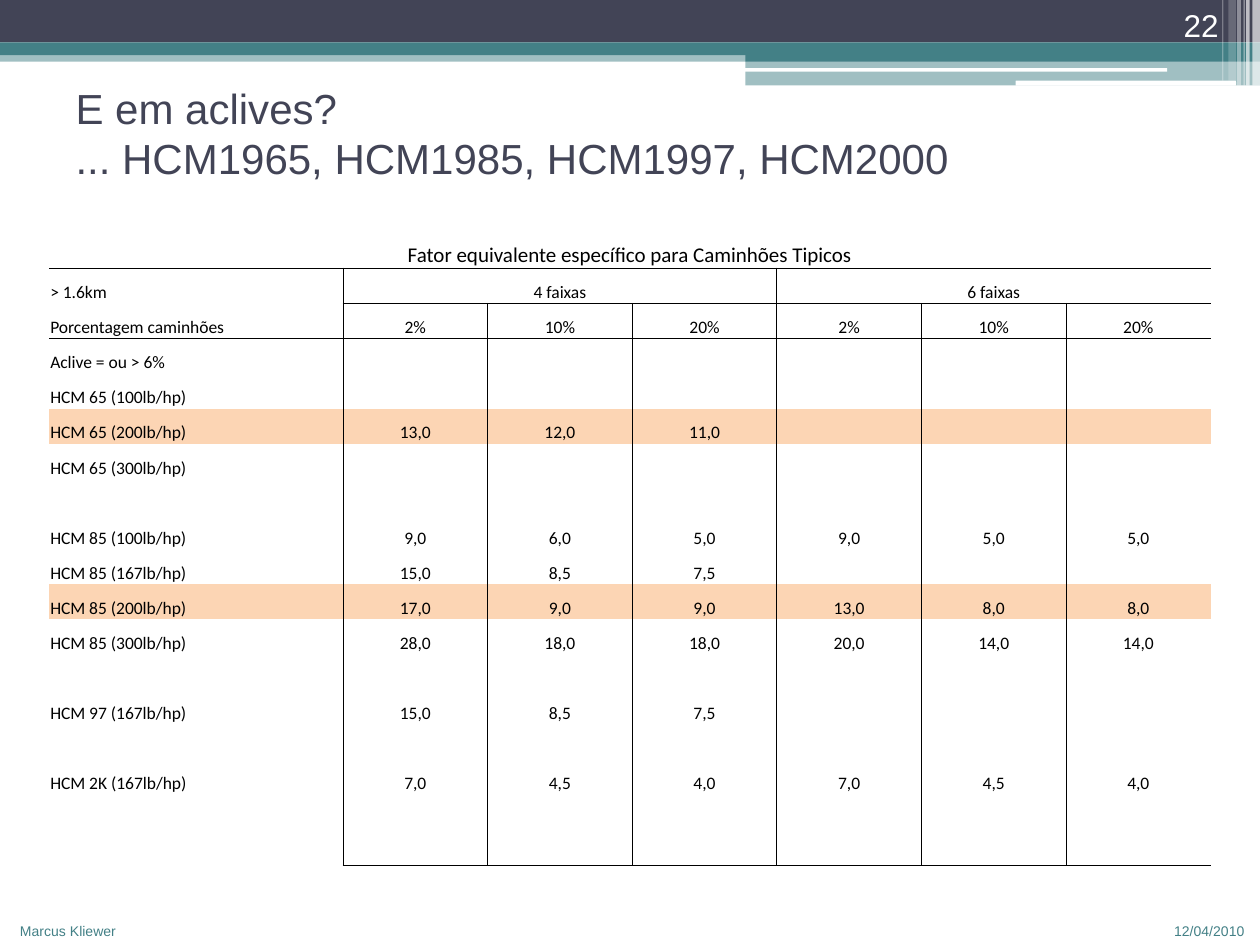
"""Build the slide on truck equivalency factors on upgrades."""
from lxml import etree
from pptx import Presentation
from pptx.dml.color import RGBColor
from pptx.enum.shapes import MSO_SHAPE
from pptx.enum.text import MSO_ANCHOR, PP_ALIGN
from pptx.oxml.ns import qn
from pptx.util import Pt

NAVY, TEAL, WHITE, BLACK, PEACH = "424456", "438086", "FFFFFF", "000000", "FCD5B4"


def color(hex_value):
    """Turn a hex string into a colour."""
    return RGBColor.from_string(hex_value)


def write(paragraph, text, size, hex_value, font="Arial", align=PP_ALIGN.LEFT):
    """Put one formatted run in a paragraph."""
    paragraph.alignment = align
    paragraph.text = text
    for run in paragraph.runs:
        for name, value in {"size": Pt(size), "name": font}.items():
            setattr(run.font, name, value)
        run.font.color.rgb = color(hex_value)


presentation = Presentation()
presentation.slide_width, presentation.slide_height = Pt(720), Pt(540)
slide = presentation.slides.add_slide(presentation.slide_layouts[5])

bars = [
    (0, 28.8, 720, 6.5, TEAL, 50),
    (0, 0, 720, 24.3, NAVY, 100),
    (0, 24.3, 720, 7.2, TEAL, 100),
    (426, 28, 294, 7.2, TEAL, 100),
    (426, 35.2, 294, 13.6, TEAL, 50),
    (425.5, 38.9, 241.5, 2.1, WHITE, 100),
    (580.3, 46.1, 126, 2.9, WHITE, 100),
    (715.7, 0, 4.3, 49, WHITE, 65),
    (712.1, 0, 2.1, 49, WHITE, 65),
    (710.6, 0, 0.7, 49, WHITE, 60),
    (707, 0, 2.1, 49, WHITE, 40),
    (702, 0, 4.3, 46.1, WHITE, 20),
    (698.4, 0, 0.7, 46.1, WHITE, 30),
]
for left, top, width, height, hex_value, opacity in bars:
    rounded = left in (425.5, 580.3)
    preset = MSO_SHAPE.ROUNDED_RECTANGLE if rounded else MSO_SHAPE.RECTANGLE
    bar = slide.shapes.add_shape(preset, Pt(left), Pt(top), Pt(width), Pt(height))
    bar.shadow.inherit = False
    bar.line.fill.background()
    bar.fill.solid()
    bar.fill.fore_color.rgb = color(hex_value)
    if opacity < 100:
        for node in bar.element.spPr.iter(qn("a:srgbClr")):
            etree.SubElement(node, qn("a:alpha"), val=str(opacity * 1000))

title = slide.shapes.title
title.element.getparent().append(title.element)
for name, value in {"left": 36, "top": 33.84, "width": 648, "height": 84.24}.items():
    setattr(title, name, Pt(value))
title.text_frame.vertical_anchor = MSO_ANCHOR.MIDDLE
write(title.text_frame.paragraphs[0],
      "E em aclives?\v... HCM1965, HCM1985, HCM1997, HCM2000", 24, NAVY)

labels = [
    ("12/04/2010", 663.84, 523.44, 56.16, 16.56, 8, TEAL, PP_ALIGN.LEFT, MSO_ANCHOR.TOP),
    ("Marcus Kliewer", 0, 523.44, 73.44, 16.56, 8, TEAL, PP_ALIGN.RIGHT, MSO_ANCHOR.TOP),
    ("22", 643.68, 0, 59.76, 28.8, 18, WHITE, PP_ALIGN.RIGHT, MSO_ANCHOR.BOTTOM),
]
for text, left, top, width, height, size, hex_value, align, anchor in labels:
    box = slide.shapes.add_textbox(Pt(left), Pt(top), Pt(width), Pt(height))
    box.text_frame.word_wrap = True
    box.text_frame.vertical_anchor = anchor
    write(box.text_frame.paragraphs[0], text, size, hex_value, align=align)

rows = [
    ["Fator equivalente específico para Caminhões Tipicos"],
    ["> 1.6km", "4 faixas", "", "", "6 faixas"],
    ["Porcentagem caminhões", "2%", "10%", "20%", "2%", "10%", "20%"],
    ["Aclive = ou > 6%"],
    ["HCM 65 (100lb/hp)"],
    ["HCM 65 (200lb/hp)", "13,0", "12,0", "11,0"],
    ["HCM 65 (300lb/hp)"],
    [],
    ["HCM 85 (100lb/hp)", "9,0", "6,0", "5,0", "9,0", "5,0", "5,0"],
    ["HCM 85 (167lb/hp)", "15,0", "8,5", "7,5"],
    ["HCM 85 (200lb/hp)", "17,0", "9,0", "9,0", "13,0", "8,0", "8,0"],
    ["HCM 85 (300lb/hp)", "28,0", "18,0", "18,0", "20,0", "14,0", "14,0"],
    [],
    ["HCM 97 (167lb/hp)", "15,0", "8,5", "7,5"],
    [],
    ["HCM 2K (167lb/hp)", "7,0", "4,5", "4,0", "7,0", "4,5", "4,0"],
    [],
    [],
]
last_row, column_count = len(rows) - 1, 7
frame = slide.shapes.add_table(len(rows), column_count, Pt(28), Pt(129.6), Pt(663.84), Pt(365))
table = frame.table
table.first_row = table.horz_banding = False
for index, column in enumerate(table.columns):
    column.width = Pt(82.64 if index else 168)
for index, row in enumerate(table.rows):
    row.height = Pt({0: 23.7, last_row: 20.6}.get(index, 20.05))
for row, first, last in [(0, 0, 6), (1, 1, 3), (1, 4, 6)]:
    table.cell(row, first).merge(table.cell(row, last))

vertical_rules = {0: (), 1: (1, 4)}
horizontal_rules = {1: (0, 1), 2: (1, 0.5), 3: (0, 0.5), last_row + 1: (1, 1)}
margins = {"margin_left": 0.72, "margin_right": 0.72, "margin_top": 0.72, "margin_bottom": 0}
for row, texts in enumerate(rows):
    edges = vertical_rules.get(row, range(1, column_count))
    for column in range(column_count):
        cell = table.cell(row, column)
        for name, value in margins.items():
            setattr(cell, name, Pt(value))
        cell.vertical_anchor = MSO_ANCHOR.BOTTOM
        widths = {"lnL": 0.5 * (column in edges), "lnR": 0.5 * (column + 1 in edges)}
        for side, edge in (("lnT", row), ("lnB", row + 1)):
            start, width = horizontal_rules.get(edge, (0, 0))
            widths[side] = width if column >= start else 0
        properties = cell._tc.get_or_add_tcPr()
        for side, width in widths.items():
            line = etree.SubElement(properties, qn(f"a:{side}"), w=str(Pt(width)))
            if width:
                fill = etree.SubElement(line, qn("a:solidFill"))
                etree.SubElement(fill, qn("a:srgbClr"), val=BLACK)
            else:
                etree.SubElement(line, qn("a:noFill"))
        if row in (5, 10):
            cell.fill.solid()
            cell.fill.fore_color.rgb = color(PEACH)
        else:
            cell.fill.background()
        paragraph = cell.text_frame.paragraphs[0]
        if column < len(texts) and texts[column]:
            align = PP_ALIGN.CENTER if column or row == 0 else PP_ALIGN.LEFT
            write(paragraph, texts[column], 10 if row else 12, BLACK, "Calibri", align)
        else:
            etree.SubElement(paragraph._p, qn("a:endParaRPr"), sz="1000")

presentation.save("out.pptx")
